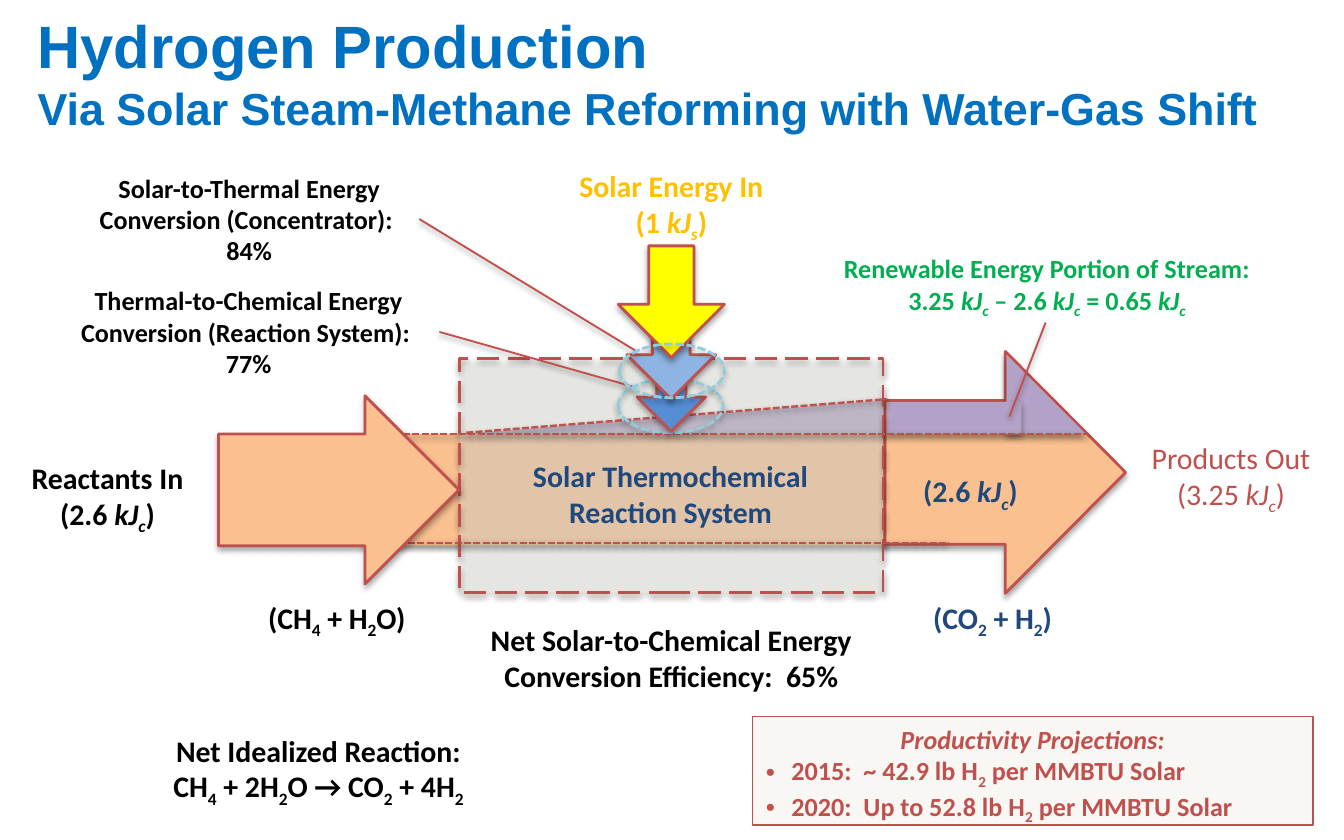
from collections import namedtuple

from lxml import etree
from pptx import Presentation
from pptx import util as u
from pptx.dml.color import RGBColor
from pptx.enum import dml, shapes, text
from pptx.oxml.ns import qn

WIDTH, HEIGHT = u.Inches(10), u.Inches(6.25)
CELL = WIDTH / 100  # the slide is a grid of 100 columns by 62.5 rows
RED, NAVY, BLACK, GREEN = "C0504D", "1F497D", "000000", "00B050"
ORANGE, PURPLE, AQUA, GOLD, BLUE = "FAC090", "B3A2C7", "93CDDD", "FFC000", "0070C0"
KIND, DASH = shapes.MSO_SHAPE, dml.MSO_LINE
CENTER, LEFT = text.PP_ALIGN.CENTER, text.PP_ALIGN.LEFT


class Box(namedtuple("Box", "x y w h")):
    def inner(self, x, y, w, h):
        return Box(self.x + x, self.y + y, w, h)

    def emu(self):
        return [u.Emu(round(side * CELL)) for side in self]


def color(value):
    return RGBColor.from_string(value)


def cast_shadow(shape, opacity, distance):
    effects = etree.SubElement(shape._element.spPr, qn("a:effectLst"))
    shadow = etree.SubElement(effects, qn("a:outerShdw"), blurRad="40000", dist=str(distance),
                              dir="5400000", rotWithShape="0")
    tint = etree.SubElement(shadow, qn("a:srgbClr"), val=BLACK)
    etree.SubElement(tint, qn("a:alpha"), val=str(opacity * 1000))


def add_shape(slide, kind, box, fill=None, line=None, width=1.5, dash=None,
              adjust=(), rotation=0, opacity=None, shadow=True):
    shape = slide.shapes.add_shape(kind, *box.emu())
    shape.rotation = rotation
    for index, value in enumerate(adjust):
        shape.adjustments[index] = value
    if fill:
        shape.fill.solid()
        shape.fill.fore_color.rgb = color(fill)
    else:
        shape.fill.background()
    if opacity:
        tint = shape._element.spPr.xpath("./a:solidFill/a:srgbClr")[0]
        etree.SubElement(tint, qn("a:alpha"), val=str(opacity * 1000))
    if line:
        shape.line.color.rgb = color(line)
        shape.line.width = u.Pt(width)
        shape.line.dash_style = dash
    else:
        shape.line.fill.background()
    if shadow:
        cast_shadow(shape, 35, 23000)
    else:
        shape.shadow.inherit = False
    return shape


def add_line(slide, box, start, end, width=1.0, dash=None):
    points = [box.x + start[0], box.y + start[1], box.x + end[0], box.y + end[1]]
    line = slide.shapes.add_connector(shapes.MSO_CONNECTOR.STRAIGHT, *Box(*points).emu())
    line.line.color.rgb = color(RED)
    line.line.width = u.Pt(width)
    line.line.dash_style = dash
    cast_shadow(line, 38, 20000)


def write(paragraph, content, size, ink, bold=True, italic=False, align=CENTER):
    """Write content where {…} is italic and […] is subscript."""
    paragraph.alignment = align
    pieces, slanted, lowered = [], italic, False
    for mark in content:
        if mark in "{}":
            slanted = mark == "{"
        elif mark in "[]":
            lowered = mark == "["
        elif pieces and pieces[-1][1:] == (slanted, lowered):
            pieces[-1] = (pieces[-1][0] + mark, slanted, lowered)
        else:
            pieces.append((mark, slanted, lowered))
    for words, slanted, lowered in pieces:
        run = paragraph.add_run()
        run.text = words
        font = run.font
        font.name, font.size = "Calibri", u.Pt(size)
        font.bold, font.italic = bold, slanted
        font.color.rgb = color(ink)
        if lowered:
            font._element.set("baseline", "-25000")


def add_label(slide, box, lines, size=16, ink=BLACK, bold=True, wrap=False):
    frame = slide.shapes.add_textbox(*box.emu()).text_frame
    frame.word_wrap = wrap
    frame.auto_size = text.MSO_AUTO_SIZE.SHAPE_TO_FIT_TEXT
    for index, content in enumerate(lines):
        paragraph = frame.add_paragraph() if index else frame.paragraphs[0]
        write(paragraph, content, size, ink, bold)


def title(slide, box):
    frame = slide.shapes.add_textbox(*box.emu()).text_frame
    frame.margin_left = frame.margin_right = frame.margin_top = frame.margin_bottom = 0
    frame.word_wrap = True
    frame.vertical_anchor = text.MSO_ANCHOR.BOTTOM
    frame.text = "Hydrogen Production\vVia Solar Steam-Methane Reforming with Water-Gas Shift"
    for run, size in zip(frame.paragraphs[0].runs, (32, 24)):
        run.font.name, run.font.size, run.font.bold = "Arial", u.Pt(size), True
        run.font.color.rgb = color(BLUE)


def process(slide, box):
    """Draw the stream from reactants through the reactor to products."""
    flow_arrow = dict(fill=ORANGE, line=RED, adjust=(0.594, 0.5), rotation=270)
    add_shape(slide, KIND.RECTANGLE, box.inner(13.3, 6.3, 36.7, 8.3), ORANGE)
    add_shape(slide, KIND.ISOSCELES_TRIANGLE, box.inner(18, 3.8, 31.7, 2.5), PURPLE, adjust=[0.998])
    add_shape(slide, KIND.DOWN_ARROW, box.inner(49.8, 0.2, 18, 17.9), **flow_arrow)
    add_shape(slide, KIND.ISOSCELES_TRIANGLE, box.inner(58.9, 0.4, 5.9, 5.9), PURPLE, adjust=[0])
    add_shape(slide, KIND.RECTANGLE, box.inner(50, 3.9, 10, 2.4), PURPLE)

    reactor = box.inner(18.2, 0.7, 31.5, 17.4)
    add_shape(slide, KIND.RECTANGLE, reactor, "F5F4ED", opacity=40)
    add_shape(slide, KIND.RECTANGLE, reactor, line=RED, dash=DASH.LONG_DASH)
    for start, end in (((10.9, 14.4), (54.6, 14.4)),
                       ((18.7, 6.2), (50, 3.7)),
                       ((13.3, 6.3), (64.9, 6.3))):
        add_line(slide, box, start, end, 1.25, DASH.SQUARE_DOT)
    add_shape(slide, KIND.DOWN_ARROW, box.inner(2.2, 1.5, 14, 17.9), **flow_arrow)

    add_label(slide, box.inner(22.5, 7.6, 22.8, 6.4),
              ["Solar Thermochemical", "Reaction System"], ink=NAVY)
    add_label(slide, box.inner(51.6, 8.7, 9.2, 3.7), ["(2.6 {kJ[c]})"], ink=NAVY)


def stream_labels(slide, box):
    add_label(slide, box.inner(1.3, 0, 13.4, 6.4), ["Reactants In", "(2.6 {kJ[c]})"])
    add_label(slide, box.inner(84.6, -1.5, 14, 6.4), ["Products Out", "(3.25 {kJ[c]})"],
              ink=RED, bold=False)
    add_label(slide, box.inner(18.8, 10.4, 12.5, 3.7), ["(CH[4] + H[2]O)"])
    add_label(slide, box.inner(68.3, 10.4, 11.1, 3.7), ["(CO[2] + H[2])"], ink=NAVY)


def callouts(slide, box):
    """Place the three notes with their leader lines."""
    notes = [
        ((5.8, 0, 25.5, 8.1), BLACK, (31.2, 4), (47.3, 13.8),
         ["Solar-to-Thermal Energy Conversion (Concentrator):  84%"]),
        ((4.3, 8.4, 28.4, 8.1), BLACK, (32.7, 12.4), (47.2, 16.5),
         ["Thermal-to-Chemical Energy Conversion (Reaction System):  77%"]),
        ((56.7, 6, 42.4, 5.7), GREEN, (77.8, 11.7), (75.1, 18.7),
         ["Renewable Energy Portion of Stream:",
          "3.25 {kJ[c]} – 2.6 {kJ[c]} = 0.65 {kJ[c]}"]),
    ]
    for place, ink, start, end, lines in notes:
        add_label(slide, box.inner(*place), lines, 14, ink, wrap=True)
        add_line(slide, box, start, end)


def solar_input(slide, box):
    """Stack the energy arrows, each narrower than the one above it."""
    ring = dict(line=AQUA, dash=DASH.SQUARE_DOT)
    add_label(slide, box.inner(0, 0, box.w, 6.4), ["Solar Energy In", "(1 {kJ[s]})"], ink=GOLD)
    add_shape(slide, KIND.OVAL, box.inner(4, 16.2, 7.8, 4), **ring)
    for top, width, fill in ((11.8, 5.1, "558ED5"), (9.4, 6.6, "8EB4E3"), (6.3, 7.9, "FFFF00")):
        arrow = box.inner((box.w - width) / 2, top, width, 8.3)
        add_shape(slide, KIND.DOWN_ARROW, arrow, fill, RED, adjust=(0.426, 0.5))
    add_shape(slide, KIND.OVAL, box.inner(4.1, 13.6, 7.8, 4), **ring)


def results(slide, box):
    add_label(slide, box.inner(30.5, 0, 31.5, 6.4),
              ["Net Solar-to-Chemical Energy Conversion Efficiency:  65%"], wrap=True)
    add_label(slide, box.inner(0, 8.2, 40, 6.4),
              ["Net Idealized Reaction:", "CH[4] + 2H[2]O → CO[2] + 4H[2]"], wrap=True)


def projections(slide, box):
    panel = add_shape(slide, KIND.RECTANGLE, box, "F8F7F3", RED, 0.75, shadow=False)
    frame = panel.text_frame
    frame.word_wrap = True
    frame.vertical_anchor = text.MSO_ANCHOR.TOP
    write(frame.paragraphs[0], "Productivity Projections:", 14, RED, italic=True)
    for content in ("2015:  ~ 42.9 lb H[2] per MMBTU Solar",
                    "2020:  Up to 52.8 lb H[2] per MMBTU Solar"):
        paragraph = frame.add_paragraph()
        layout = paragraph._p.get_or_add_pPr()
        indent = u.Inches(0.19)
        layout.set("marL", str(int(indent)))
        layout.set("indent", str(-int(indent)))
        etree.SubElement(layout, qn("a:buFont"), typeface="Arial")
        etree.SubElement(layout, qn("a:buChar"), char="•")
        write(paragraph, content, 14, RED, align=LEFT)


def main():
    deck = Presentation()
    deck.slide_width, deck.slide_height = WIDTH, HEIGHT
    slide = deck.slides.add_slide(deck.slide_layouts[6])
    title(slide, Box(2.8, 0.6, 93.6, 9.4))
    process(slide, Box(16, 26, 68, 19))
    stream_labels(slide, Box(0, 33.7, 100, 14))
    callouts(slide, Box(0, 12.3, 100, 19))
    solar_input(slide, Box(42, 12, 15.9, 20.2))
    results(slide, Box(3.7, 45.8, 62, 14.6))
    projections(slide, Box(56, 53.3, 41.7, 8.1))
    deck.save("out.pptx")


if __name__ == "__main__":
    main()
